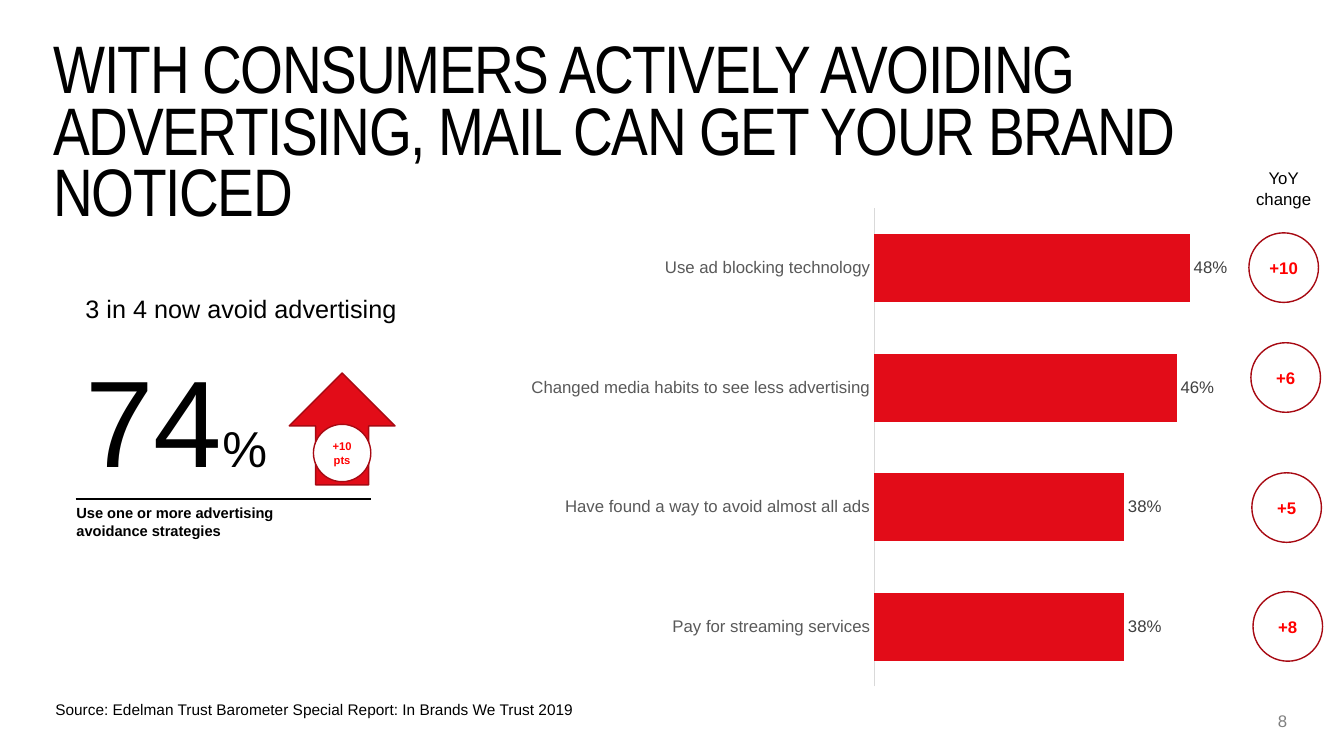
from lxml import etree
from pptx import Presentation
from pptx import util as u
from pptx.chart import data as chart_data
from pptx.dml import color
from pptx.enum import chart as chart_enum, shapes, text
from pptx.oxml import ns

BLACK, RED, DARK_RED, BRIGHT_RED = "000000", "E20C18", "A70912", "FF0000"
Pt = u.Pt


def rgb(value):
    return color.RGBColor.from_string(value)


def write(frame, words, size=12, ink=BLACK, bold=False, font="Arial",
          align=text.PP_ALIGN.LEFT, anchor=text.MSO_ANCHOR.TOP, wrap=False, inset=None):
    """Fill a text frame with one formatted paragraph and return it."""
    frame.word_wrap = wrap
    frame.vertical_anchor = anchor
    if inset is not None:
        frame.margin_left = frame.margin_top = Pt(inset)
        frame.margin_right = frame.margin_bottom = Pt(inset)
    para = frame.paragraphs[0]
    para.text = words
    para.alignment = align
    for span in para.runs:
        span.font.size, span.font.bold, span.font.name = Pt(size), bold, font
        span.font.color.rgb = rgb(ink)
    return para


deck = Presentation()
deck.slide_width, deck.slide_height = Pt(960), Pt(540)
page = deck.slides.add_slide(deck.slide_layouts[5])

# Title
title = page.shapes.title
title.left, title.top, title.width, title.height = Pt(38.2), Pt(32.4), Pt(903.6), Pt(37.4)
title.text_frame.auto_size = text.MSO_AUTO_SIZE.NONE
para = write(title.text_frame,
             "WITH CONSUMERS ACTIVELY AVOIDING ADVERTISING, MAIL CAN GET YOUR BRAND NOTICED",
             size=48, font="Arial Narrow", wrap=True, inset=0)
para.line_spacing = Pt(44)
para.runs[0].font._element.set("spc", "-100")

# Bar chart of avoidance strategies
strategies = chart_data.CategoryChartData(number_format="0%")
strategies.categories = ["Pay for streaming services", "Have found a way to avoid almost all ads",
                         "Changed media habits to see less advertising",
                         "Use ad blocking technology"]
strategies.add_series("Series 1", (0.38, 0.38, 0.46, 0.48))
chart = page.shapes.add_chart(chart_enum.XL_CHART_TYPE.BAR_CLUSTERED, Pt(368.6), Pt(141.8),
                              Pt(548.6), Pt(355.7), strategies).chart
chart.has_legend = chart.has_title = False
chart.font.size, chart.font.name = Pt(10), "Arial"
chart.font.color.rgb = rgb(BLACK)

category_axis, value_axis = chart.category_axis, chart.value_axis
category_axis.major_tick_mark = chart_enum.XL_TICK_MARK.NONE
category_axis.format.line.color.rgb = rgb("D9D9D9")
category_axis.format.line.width = Pt(0.75)
value_axis.minimum_scale, value_axis.maximum_scale = 0, 0.6
value_axis.has_major_gridlines = False
value_axis.visible = False

plot = chart.plots[0]
plot.gap_width = 75
plot.vary_by_categories = False
bars = plot.series[0].format
bars.fill.solid()
bars.fill.fore_color.rgb = rgb(RED)
plot.has_data_labels = True
labels = plot.data_labels
labels.show_value = True
labels.number_format, labels.number_format_is_linked = "0%", False
labels.position = chart_enum.XL_LABEL_POSITION.OUTSIDE_END
for font, ink in ((category_axis.tick_labels.font, "595959"), (labels.font, "404040")):
    font.size, font.name = Pt(12), "Arial"
    font.color.rgb = rgb(ink)

# Text boxes
centre, right = text.PP_ALIGN.CENTER, text.PP_ALIGN.RIGHT
for left, top, width, height, words, style in (
    (885.6, 507.6, 33.8, 14.4, "8",
     dict(ink="808080", align=right, wrap=True, inset=0)),
    (889.9, 116.6, 54, 36, "YoY\vchange", dict(align=centre)),
    (54, 205.9, 242.6, 28.8, "3 in 4 now avoid advertising", dict(size=18)),
    (47.5, 356.4, 157.7, 32.4, "Use one or more advertising\vavoidance strategies",
     dict(size=10.5, bold=True)),
    (32.4, 496.8, 388.1, 20.9,
     "Source: Edelman Trust Barometer Special Report: In Brands We Trust 2019", dict(size=11)),
):
    box = page.shapes.add_textbox(Pt(left), Pt(top), Pt(width), Pt(height))
    write(box.text_frame, words, **style)

# Headline figure
figure = page.shapes.add_textbox(Pt(54), Pt(242.6), Pt(146.2), Pt(113.8))
para = write(figure.text_frame, "74", size=88)
percent = para.add_run()
percent.text = "%"
percent.font.size, percent.font.name = Pt(36), "Arial"
percent.font.color.rgb = rgb(BLACK)

rule = page.shapes.add_connector(shapes.MSO_CONNECTOR.STRAIGHT,
                                 Pt(54), Pt(356.4), Pt(265), Pt(356.4))
rule.line.color.rgb = rgb(BLACK)
rule.line.width = Pt(1.5)
etree.SubElement(rule._element.spPr, ns.qn("a:effectLst"))

# Arrow, its badge and the year-on-year circles
arrow, circle = shapes.MSO_SHAPE.UP_ARROW, shapes.MSO_SHAPE.OVAL
for kind, left, top, width, height, fill, words, size in (
    (arrow, 206.6, 266.4, 75.6, 79.9, RED, "", 8),
    (circle, 223.9, 303.1, 41, 41, "FFFFFF", "+10 pts", 8),
    (circle, 892.1, 166.3, 49.7, 49.7, None, "+10", 12),
    (circle, 893.5, 244.8, 49.7, 49.7, None, "+6", 12),
    (circle, 894.2, 337.7, 49.7, 49.7, None, "+5", 12),
    (circle, 895, 422.6, 49.7, 49.7, None, "+8", 12),
):
    mark = page.shapes.add_shape(kind, Pt(left), Pt(top), Pt(width), Pt(height))
    mark.shadow.inherit = False
    mark.line.color.rgb = rgb(DARK_RED)
    mark.line.width = Pt(1)
    if fill:
        mark.fill.solid()
        mark.fill.fore_color.rgb = rgb(fill)
    else:
        mark.fill.background()
    if words:
        write(mark.text_frame, words, size=size, ink=BRIGHT_RED, bold=True, align=centre,
              anchor=text.MSO_ANCHOR.MIDDLE, wrap=True)

deck.save("out.pptx")
